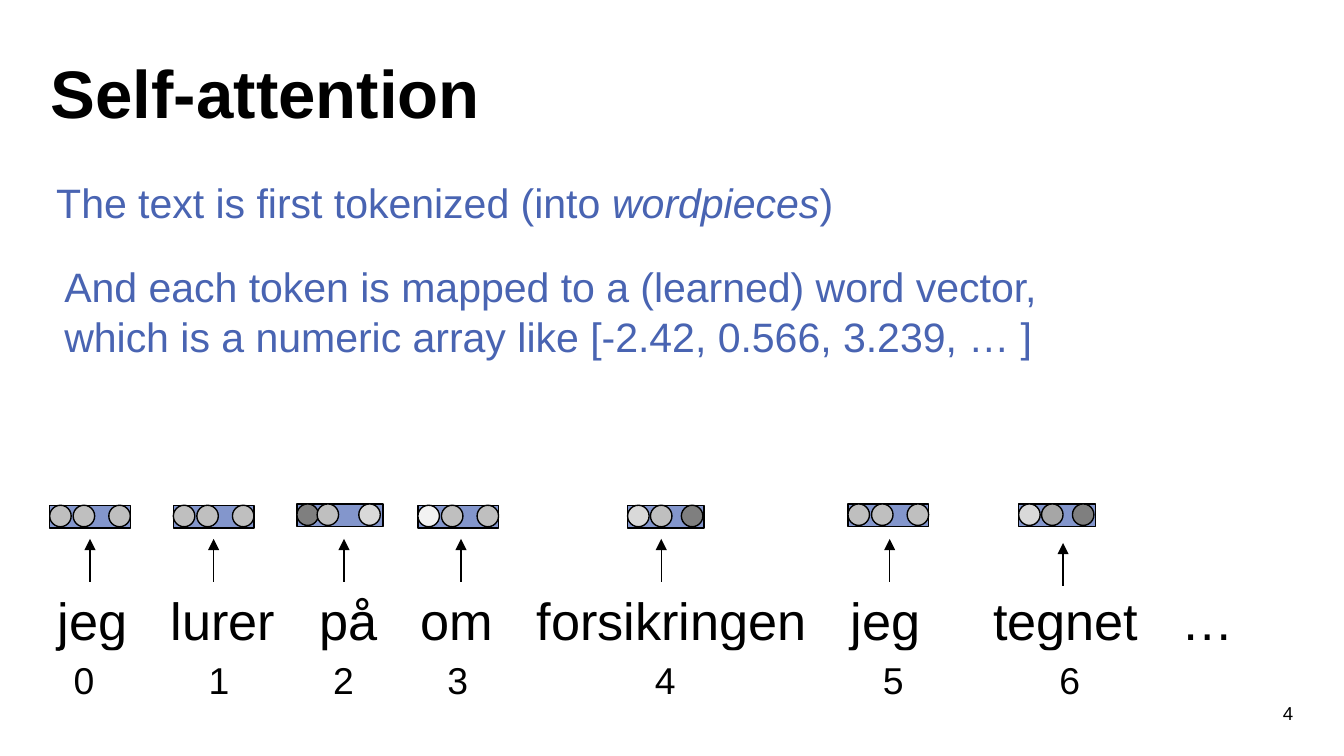
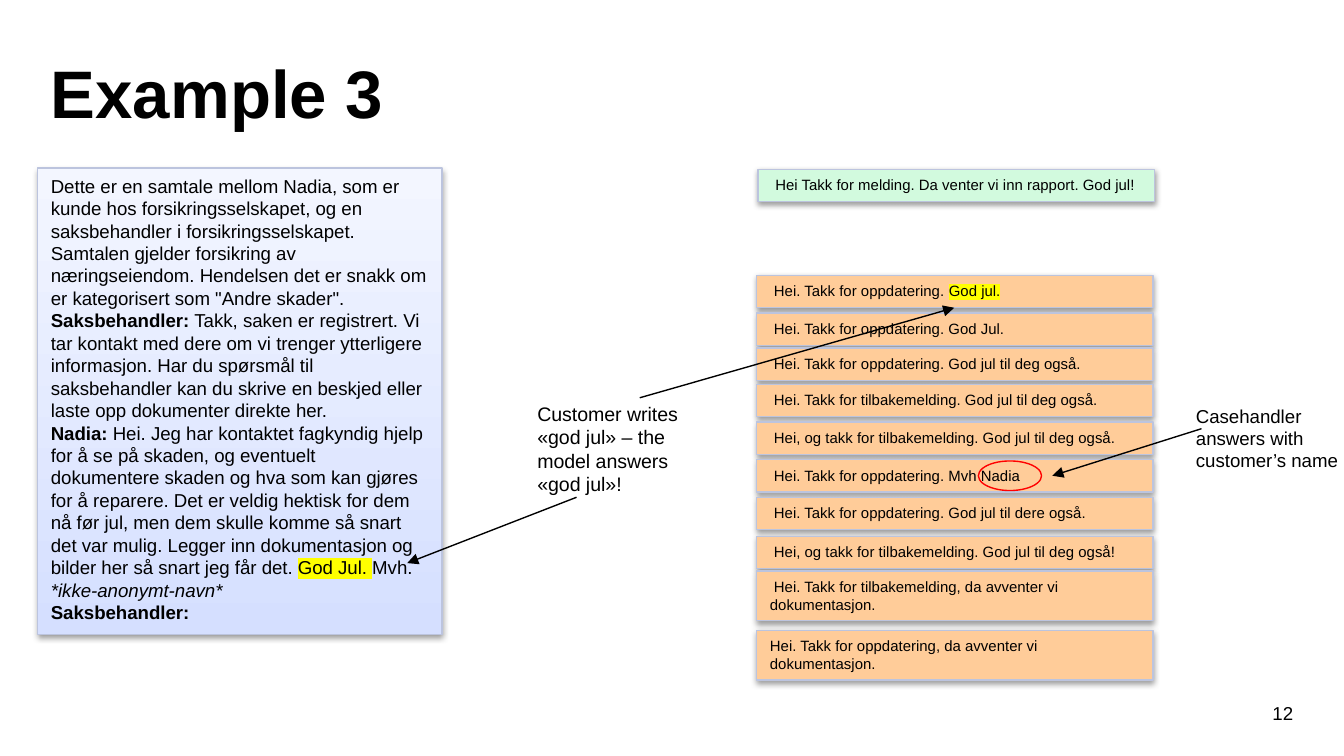
from dataclasses import dataclass

from lxml import etree
from pptx import Presentation
from pptx.dml.color import RGBColor
from pptx.enum.shapes import MSO_CONNECTOR, MSO_SHAPE
from pptx.enum.text import MSO_ANCHOR, PP_ALIGN
from pptx.oxml.ns import qn
from pptx.util import Inches, Pt

RECTANGLE, OVAL = MSO_SHAPE.RECTANGLE, MSO_SHAPE.OVAL
STRAIGHT = MSO_CONNECTOR.STRAIGHT
TOP, BOTTOM = MSO_ANCHOR.TOP, MSO_ANCHOR.BOTTOM
LEFT, RIGHT = PP_ALIGN.LEFT, PP_ALIGN.RIGHT
COLUMNS = 100


@dataclass(frozen=True)
class Theme:
    font: str = "Arial"
    ink: str = "000000"
    paper: str = "FFFFFF"
    accent: str = "4964B2"
    vector: str = "8396CC"
    border: str = "BCC4DE"
    prompt_bottom: str = "D5DFFF"
    prompt_top: str = "F3F6FF"
    answer: str = "FFCC99"
    reference: str = "D2FADE"
    highlight: str = "FFFF00"
    ring: str = "FF0000"
    hairline: float = 0.75
    title: float = 36
    token: float = 28
    statement: float = 22
    index: float = 20
    callout: float = 10.5
    body: float = 10
    message: float = 8


class Deck:
    def __init__(self, theme):
        self.theme = theme
        self.presentation = Presentation()
        self.presentation.slide_width = Inches(10)
        self.presentation.slide_height = Inches(5.625)
        self.cell = self.presentation.slide_width / COLUMNS
        self.slide = None

    def grid(self, *lengths):
        return [round(length * self.cell) for length in lengths]

    def start(self, title, number):
        blank = self.presentation.slide_layouts[6]
        self.slide = self.presentation.slides.add_slide(blank)
        heading = self.text((2.8, 2.1, 94.5, 8.3), [title], self.theme.title, anchor=BOTTOM)
        heading.paragraphs[0].font.bold = True
        heading.paragraphs[0].line_spacing = 0.9
        self.text((92.9, 51.7, 4.3, 2.4), [str(number)], self.theme.body, align=RIGHT)

    def typeset(self, frame, paragraphs, size, color=None, align=LEFT, anchor=TOP,
                tabs=(), indent=0):
        frame.word_wrap = True
        frame.vertical_anchor = anchor
        for position, runs in enumerate(paragraphs):
            paragraph = frame.paragraphs[0] if position == 0 else frame.add_paragraph()
            properties = paragraph._p.get_or_add_pPr()
            if indent:
                properties.set("indent", str(self.grid(indent)[0]))
            if tabs:
                stops = etree.SubElement(properties, qn("a:tabLst"))
                for tab in self.grid(*tabs):
                    etree.SubElement(stops, qn("a:tab"), pos=str(tab), algn="l")
            paragraph.alignment = align
            paragraph.font.name = self.theme.font
            paragraph.font.size = Pt(size)
            paragraph.font.color.rgb = RGBColor.from_string(color or self.theme.ink)
            for words, style in [(runs, "")] if isinstance(runs, str) else runs:
                self.phrase(paragraph, words, style)
        return frame

    def phrase(self, paragraph, words, style):
        run = paragraph.add_run()
        run.text = words
        if style == "bold":
            run.font.bold = True
        elif style == "italic":
            run.font.italic = True
        elif style == "highlight":
            marker = etree.SubElement(run._r.get_or_add_rPr(), qn("a:highlight"))
            etree.SubElement(marker, qn("a:srgbClr"), val=self.theme.highlight)

    def text(self, area, paragraphs, size, **options):
        box = self.slide.shapes.add_textbox(*self.grid(*area))
        return self.typeset(box.text_frame, paragraphs, size, **options)

    def shape(self, kind, area, fill=None, line=None):
        shape = self.slide.shapes.add_shape(kind, *self.grid(*area))
        shape.shadow.inherit = False
        if fill:
            shape.fill.solid()
            shape.fill.fore_color.rgb = RGBColor.from_string(fill)
        else:
            shape.fill.background()
        if line:
            shape.line.color.rgb = RGBColor.from_string(line)
            shape.line.width = Pt(self.theme.hairline)
        else:
            shape.line.fill.background()
        return shape

    def card(self, area, fill, paragraphs, size, indent=0):
        card = self.shape(RECTANGLE, area, fill, self.theme.border)
        effects = card.element.spPr.find(qn("a:effectLst"))
        shadow = etree.SubElement(effects, qn("a:outerShdw"), blurRad="40000",
                                  dist="20000", dir="5400000", rotWithShape="0")
        black = etree.SubElement(shadow, qn("a:srgbClr"), val=self.theme.ink)
        etree.SubElement(black, qn("a:alpha"), val="38000")
        self.typeset(card.text_frame, paragraphs, size, indent=indent)
        return card

    def prompt(self, area, paragraphs):
        card = self.card(area, self.theme.prompt_bottom, paragraphs, self.theme.body)
        card.fill.gradient()
        card.fill.gradient_angle = 90
        shades = self.theme.prompt_bottom, self.theme.prompt_top
        for stop, shade in zip(card.fill.gradient_stops, shades):
            stop.color.rgb = RGBColor.from_string(shade)

    def word_row(self, area, words, starts, size):
        row = self.shape(RECTANGLE, area, self.theme.paper)
        row.text_frame.margin_left = self.grid(starts[0] - area[0])[0]
        self.typeset(row.text_frame, ["\t".join(words)], size,
                     tabs=[start - starts[0] for start in starts[1:]])

    def vector(self, left, top, width, dots, greys):
        self.shape(RECTANGLE, (left, top, width, 1.7), self.theme.vector, self.theme.ink)
        for offset, grey in zip(dots, greys):
            self.shape(OVAL, (left + offset, top, 1.6, 1.6), grey, self.theme.ink)

    def arrow(self, *ends):
        arrow = self.slide.shapes.add_connector(STRAIGHT, *self.grid(*ends))
        arrow.line.color.rgb = RGBColor.from_string(self.theme.ink)
        arrow.line.width = Pt(self.theme.hairline)
        outline = arrow.element.spPr
        etree.SubElement(outline.find(qn("a:ln")), qn("a:tailEnd"), type="triangle")
        etree.SubElement(outline, qn("a:effectLst"))


def self_attention(deck):
    theme = deck.theme
    deck.start("Self-attention", 4)
    tokens = ["jeg", "lurer", "på", "om", "forsikringen", "jeg", "tegnet", "…"]
    deck.word_row((2.2, 43.3, 91.3, 11.8), tokens,
                  [4.3, 12.7, 23.75, 31.3, 39.95, 63.3, 73.9, 87.9], theme.token)

    dark, mid, soft, pale, white = "7F7F7F", "A6A6A6", "BFBFBF", "D9D9D9", "F2F2F2"
    wide, narrow = (0, 1.75, 4.4), (0, 1.7, 4)
    vectors = [
        (3.7, 37.6, 6, wide, (soft, soft, soft)),
        (12.9, 37.6, 6, wide, (soft, soft, soft)),
        (22.1, 37.5, 6.4, (0, 1.5, 4.6), (dark, soft, pale)),
        (31.1, 37.6, 6, wide, (white, soft, soft)),
        (46.7, 37.6, 5.7, narrow, (pale, soft, dark)),
        (63.1, 37.5, 6, wide, (soft, soft, soft)),
        (75.8, 37.5, 5.7, narrow, (pale, mid, dark)),
    ]
    for vector in vectors:
        deck.vector(*vector)
    for center in (6.7, 15.9, 25.6, 34.3, 49.2, 66.2):
        deck.arrow(center, 43.3, center, 40.1)
    deck.arrow(79.1, 43.6, 79.1, 40.4)

    deck.text((3.2, 12.7, 91.9, 4.7),
              [[("The text is first tokenized (into ", ""), ("wordpieces", "italic"), (")", "")]],
              theme.statement, color=theme.accent)
    deck.text((3.8, 19, 91.9, 8.4),
              ["And each token is mapped to a (learned) word vector,",
               "which is a numeric array like [-2.42, 0.566, 3.239, … ]"],
              theme.statement, color=theme.accent)
    deck.word_row((4.5, 48.4, 91.3, 4.4), [str(index) for index in range(len(vectors))],
                  [5.5, 15.55, 24.8, 33.3, 48.75, 65.7, 78.85], theme.index)


def example_three(deck):
    theme = deck.theme
    deck.start("Example 3", 12)
    deck.prompt((2.8, 12.5, 30.1, 34.7), [
        [("Dette er en samtale mellom Nadia, som er kunde hos forsikringsselskapet, og en "
          "saksbehandler i forsikringsselskapet. Samtalen gjelder forsikring av "
          "næringseiendom. Hendelsen det er snakk om er kategorisert som "
          "\"Andre skader\". ", ""),
         ("Saksbehandler: ", "bold"),
         ("Takk, saken er registrert. Vi tar kontakt med dere om vi trenger ytterligere "
          "informasjon. Har du spørsmål til saksbehandler kan du skrive en beskjed eller "
          "laste opp dokumenter direkte her.", "")],
        [("Nadia: ", "bold"),
         ("Hei. Jeg har kontaktet fagkyndig hjelp for å se på skaden, og eventuelt "
          "dokumentere skaden og hva som kan gjøres for å reparere. Det er veldig hektisk "
          "for dem nå før jul, men dem skulle komme så snart det var mulig. Legger inn "
          "dokumentasjon og bilder her så snart jeg får det. ", ""),
         ("God Jul. ", "highlight"), ("Mvh. ", ""), ("*ikke-anonymt-navn*", "italic")],
        [("Saksbehandler:", "bold")],
    ])

    short, tall, lead = 2.4, 3.7, 0.3
    answers = [
        (20.5, short, lead, [("Hei. Takk for oppdatering. ", ""), ("God jul.", "highlight")]),
        (23.3, short, lead, "Hei. Takk for oppdatering. God Jul."),
        (25.9, short, lead, "Hei. Takk for oppdatering. God jul til deg også."),
        (28.6, short, lead, "Hei. Takk for tilbakemelding. God jul til deg også."),
        (31.4, short, lead, "Hei, og takk for tilbakemelding. God jul til deg også."),
        (34.2, short, lead, "Hei. Takk for oppdatering. Mvh Nadia"),
        (37, short, lead, "Hei. Takk for oppdatering. God jul til dere også."),
        (39.9, short, lead, "Hei, og takk for tilbakemelding. God jul til deg også!"),
        (42.5, tall, lead, "Hei. Takk for tilbakemelding, da avventer vi dokumentasjon."),
        (46.9, tall, 0, "Hei. Takk for oppdatering, da avventer vi dokumentasjon."),
    ]
    for top, height, indent, answer in answers:
        deck.card((56.3, top, 29.5, height), theme.answer, [answer], theme.message, indent)
    deck.card((56.4, 12.6, 29.5, short), theme.reference,
              ["Hei Takk for melding. Da venter vi inn rapport. God jul!"], theme.message, lead)

    deck.shape(OVAL, (72.8, 34.3, 4.7, 2.2), line=theme.ring)
    deck.text((88, 29.6, 12.9, 6.1), ["Casehandler answers with customer’s name"], theme.body)
    deck.text((39, 29.4, 12.6, 8.1),
              ["Customer writes «god jul» – the model answers «god jul»!"], theme.callout)
    deck.arrow(89.4, 31.9, 78.3, 35.4)
    deck.arrow(42.9, 37, 30.3, 41.9)
    deck.arrow(47.6, 29.6, 71, 22.9)


def main():
    deck = Deck(Theme())
    self_attention(deck)
    example_three(deck)
    deck.presentation.save("out.pptx")


if __name__ == "__main__":
    main()
